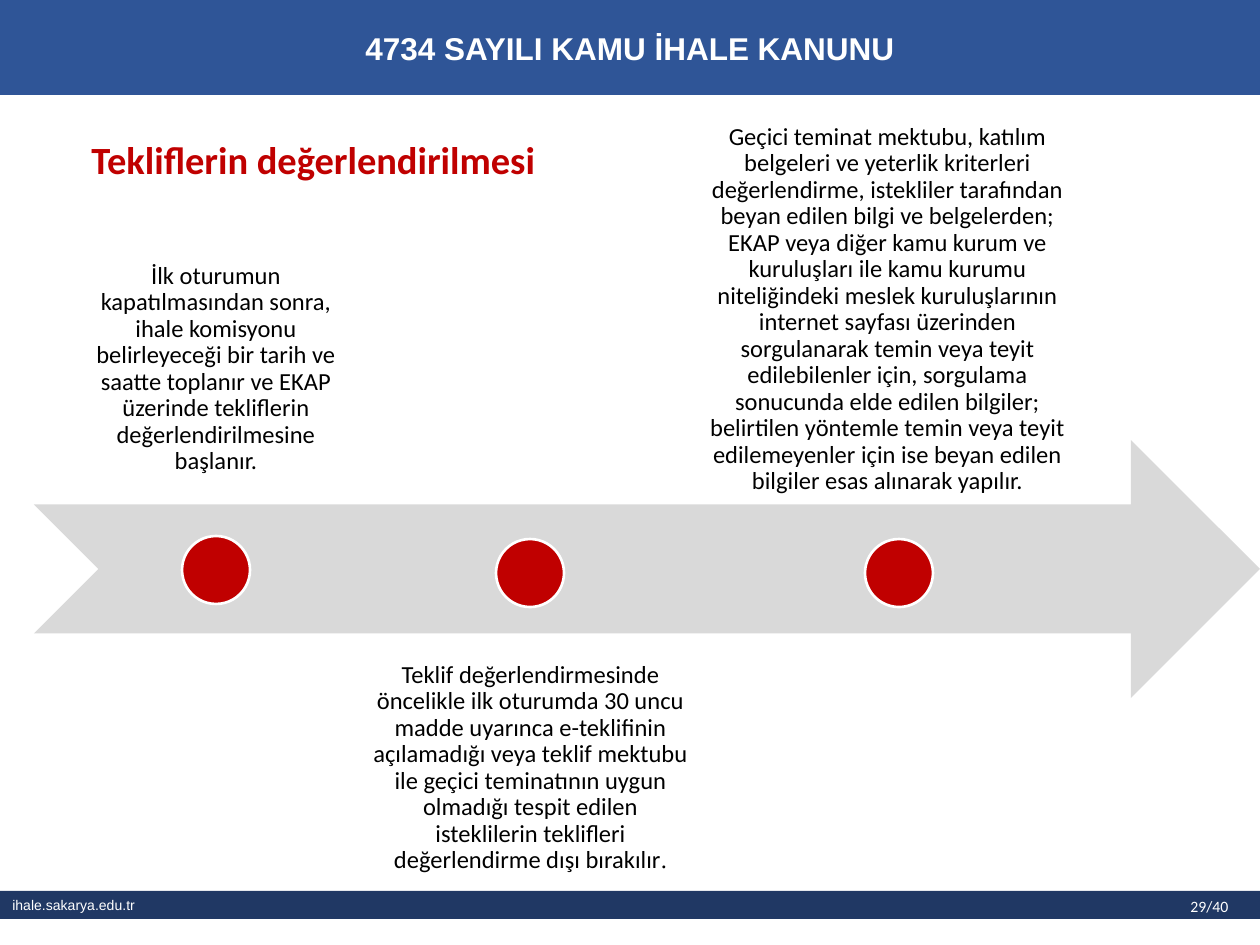
from pptx import Presentation
from pptx.dml.color import RGBColor
from pptx.enum.shapes import MSO_SHAPE
from pptx.enum.text import MSO_ANCHOR, PP_ALIGN
from pptx.util import Emu, Pt

RECT, OVAL = MSO_SHAPE.RECTANGLE, MSO_SHAPE.OVAL
ARROW = MSO_SHAPE.NOTCHED_RIGHT_ARROW
TOP, MID, LOW = MSO_ANCHOR.TOP, MSO_ANCHOR.MIDDLE, MSO_ANCHOR.BOTTOM
LEFT, CENTER = PP_ALIGN.LEFT, PP_ALIGN.CENTER
WHITE = RGBColor(0xFF, 0xFF, 0xFF)
BLACK = RGBColor(0, 0, 0)
NAVY = RGBColor(0x20, 0x38, 0x64)
BLUE = RGBColor(0x2F, 0x55, 0x97)
RED = RGBColor(0xC0, 0, 0)
GRAY = RGBColor(0xD9, 0xD9, 0xD9)
SCALE = 914400 / 126

FIRST = (
    "İlk oturumun kapatılmasından sonra, ihale komisyonu belirleyeceği bir "
    "tarih ve saatte toplanır ve EKAP üzerinde tekliflerin "
    "değerlendirilmesine başlanır."
)
SECOND = (
    "Teklif değerlendirmesinde öncelikle ilk oturumda 30 uncu madde uyarınca "
    "e-teklifinin açılamadığı veya teklif mektubu ile geçici teminatının "
    "uygun olmadığı tespit edilen isteklilerin teklifleri değerlendirme dışı "
    "bırakılır"
)
THIRD = (
    "Geçici teminat mektubu, katılım belgeleri ve yeterlik kriterleri "
    "değerlendirme, istekliler tarafından beyan edilen bilgi ve belgelerden; "
    "EKAP veya diğer kamu kurum ve kuruluşları ile kamu kurumu niteliğindeki "
    "meslek kuruluşlarının internet sayfası üzerinden sorgulanarak temin veya "
    "teyit edilebilenler için, sorgulama sonucunda elde edilen bilgiler; "
    "belirtilen yöntemle temin veya teyit edilemeyenler için ise beyan edilen "
    "bilgiler esas alınarak yapılır."
)


def px(num):
    """Turn px into EMU."""
    return Emu(round(num * SCALE))


class Deck:
    """Holds the style and the current slide."""

    def __init__(self, wide, high):
        """Start a deck with one blank slide."""
        self.prs = Presentation()
        self.prs.slide_width, self.prs.slide_height = px(wide), px(high)
        self.slide = self.prs.slides.add_slide(self.prs.slide_layouts[6])
        self.font = "Calibri"

    def words(self, shape, text, size, color, font, bold=False, align=LEFT, anchor=TOP):
        """Fill a shape with one styled paragraph and return it."""
        frame = shape.text_frame
        frame.word_wrap = True
        frame.vertical_anchor = anchor
        frame.text = text
        para = frame.paragraphs[0]
        para.alignment = align
        face = para.runs[0].font
        face.name, face.size, face.bold = font, Pt(size), bold
        face.color.rgb = color
        return para

    def shape(self, kind, box, fill):
        """Add a flat preset shape without a line."""
        shape = self.slide.shapes.add_shape(kind, *map(px, box))
        shape.shadow.inherit = False
        shape.fill.solid()
        shape.fill.fore_color.rgb = fill
        shape.line.fill.background()
        return shape

    def bar(self, box, fill, text, size, bold=False, align=LEFT):
        """Add a full-width bar with white text."""
        shape = self.shape(RECT, box, fill)
        self.words(shape, text, size, WHITE, "Arial", bold, align, MID)

    def dot(self, left, top):
        """Add a timeline marker."""
        shape = self.shape(OVAL, (left, top, 68, 68), RED)
        shape.line.color.rgb = WHITE
        shape.line.width = Pt(1.5)

    def label(self, box, text, size, color, bold=False):
        """Add a left-aligned text box."""
        shape = self.slide.shapes.add_textbox(*map(px, box))
        return self.words(shape, text, size, color, self.font, bold)

    def step(self, box, text, anchor):
        """Add a centred timeline text."""
        shape = self.slide.shapes.add_textbox(*map(px, box))
        frame = shape.text_frame
        frame.margin_left = frame.margin_right = px(14)
        frame.margin_top = frame.margin_bottom = px(14)
        para = self.words(shape, text, 14, BLACK, self.font, False, CENTER, anchor)
        para.line_spacing = 0.9
        return para


def main():
    """Build the slide and save it."""
    deck = Deck(1260, 945)
    deck.bar((0, 891, 1260, 28), NAVY, "ihale.sakarya.edu.tr", 8)
    deck.bar((0, 0, 1260, 95), BLUE, "4734 SAYILI KAMU İHALE KANUNU", 18, True, CENTER)
    deck.label((1178, 891, 117, 31), "29/40", 9, WHITE)
    title = deck.label((79, 135, 1140, 59), "Tekliflerin değerlendirilmesi", 22, RED, True)
    title.line_spacing = 0.9

    deck.shape(ARROW, (34, 440, 1226, 258), GRAY)
    deck.step((78, 205, 276, 284), FIRST, LOW)
    para = deck.step((358, 648, 345, 297), SECOND, TOP)
    stop = para.add_run()
    stop.text = "."
    stop.font.name, stop.font.size = "Times New Roman", Pt(14)
    stop.font.color.rgb = BLACK
    deck.step((694, 212, 387, 297), THIRD, LOW)
    for left, top in ((182, 536), (496, 539), (865, 539)):
        deck.dot(left, top)
    deck.prs.save("out.pptx")


if __name__ == "__main__":
    main()
